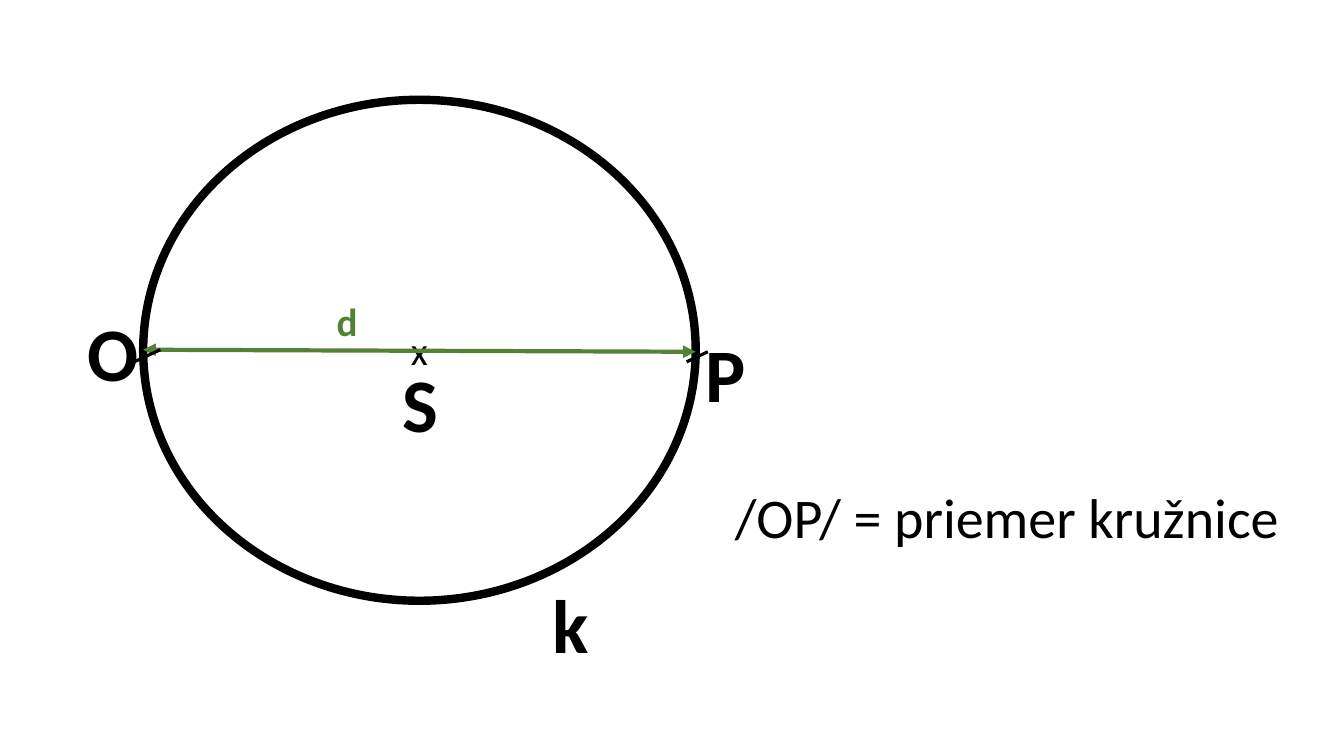
from lxml import etree
from pptx import Presentation
from pptx import util as u
from pptx.dml.color import RGBColor
from pptx.enum import shapes, text
from pptx.oxml.ns import qn

BLACK = RGBColor(0x00, 0x00, 0x00)
WHITE = RGBColor(0xFF, 0xFF, 0xFF)
GREEN = RGBColor(0x54, 0x82, 0x35)


def write(tf, content, size=54, color=BLACK, bold=False, font="Calibri",
          align=text.PP_ALIGN.LEFT, anchor=text.MSO_ANCHOR.TOP, wrap=True):
    tf.word_wrap = wrap
    tf.vertical_anchor = anchor
    p = tf.paragraphs[0]
    p.alignment = align
    r = p.add_run()
    r.text = content
    r.font.name = font
    r.font.size = u.Pt(size)
    r.font.bold = bold
    r.font.color.rgb = color


class Diagram:
    def __init__(self, slide):
        self.s = slide

    def circle(self, x, y, w, h, label):
        sp = self.s.shapes.add_shape(
            shapes.MSO_SHAPE.OVAL, *map(u.Inches, (x, y, w, h)))
        sp.shadow.inherit = False
        sp.fill.solid()
        sp.fill.fore_color.rgb = WHITE
        sp.line.color.rgb = BLACK
        sp.line.width = u.Pt(6)
        write(sp.text_frame, label, size=28, align=text.PP_ALIGN.CENTER,
              anchor=text.MSO_ANCHOR.MIDDLE)

    def line(self, x1, y1, x2, y2, color=BLACK, width=2.25, arrows=False):
        cn = self.s.shapes.add_connector(
            shapes.MSO_CONNECTOR.STRAIGHT, *map(u.Inches, (x1, y1, x2, y2)))
        cn.line.color.rgb = color
        cn.line.width = u.Pt(width)
        if arrows:
            ln = cn.line._get_or_add_ln()
            for end in ("a:headEnd", "a:tailEnd"):
                etree.SubElement(ln, qn(end), type="triangle")
        etree.SubElement(cn._element.spPr, qn("a:effectLst"))

    def label(self, content, x, y, w=0.53, h=1.01, **fmt):
        tb = self.s.shapes.add_textbox(*map(u.Inches, (x, y, w, h)))
        write(tb.text_frame, content, **fmt)
        tb.text_frame.auto_size = text.MSO_AUTO_SIZE.SHAPE_TO_FIT_TEXT


def main():
    prs = Presentation()
    prs.slide_width, prs.slide_height = u.Inches(13.33), u.Inches(7.5)
    d = Diagram(prs.slides.add_slide(prs.slide_layouts[6]))

    d.circle(1.42, 0.99, 5.48, 4.97, "x")
    d.line(1.42, 3.47, 6.9, 3.49, color=GREEN, width=3, arrows=True)
    d.label("d", 3.24, 2.9, h=0.57, size=28, color=GREEN, bold=True)
    for name, x, y in (("S", 3.89, 3.49), ("O", 0.77, 2.99), ("P", 6.9, 3.19)):
        d.label(name, x, y, bold=True)
    d.line(6.81, 3.59, 7.02, 3.49)
    d.line(1.33, 3.59, 1.59, 3.47)
    d.label("/OP/ = priemer kružnice", 7.19, 4.74, 5.65, 0.77, size=40, wrap=False)
    d.label("k", 5.38, 5.68, 0.56, bold=True, wrap=False)

    prs.save("out.pptx")


if __name__ == "__main__":
    main()
